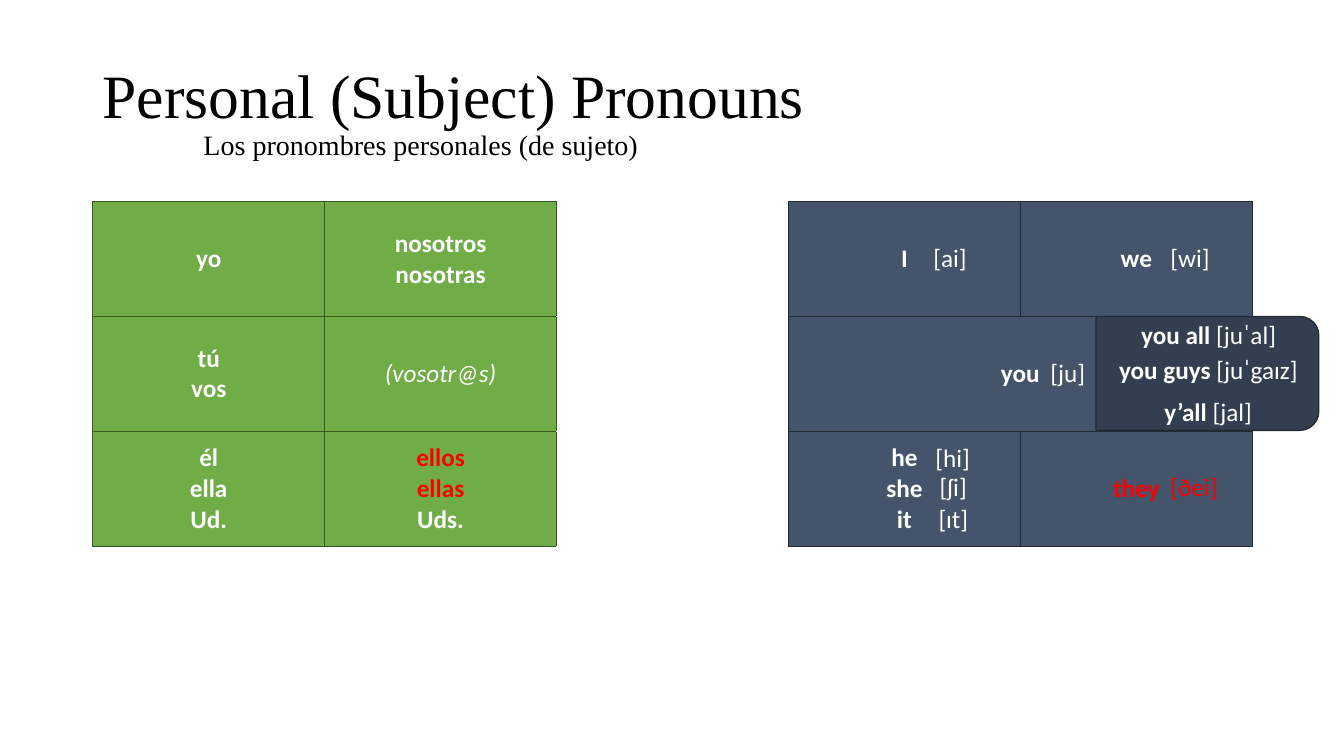
import lxml.etree
import pptx
import pptx.dml.color
import pptx.enum.shapes
import pptx.enum.text
import pptx.oxml.ns
import pptx.util

Inches = pptx.util.Inches
Pt = pptx.util.Pt
RGBColor = pptx.dml.color.RGBColor
qn = pptx.oxml.ns.qn
ALIGN = pptx.enum.text.PP_ALIGN
ANCHOR = pptx.enum.text.MSO_ANCHOR

WHITE = RGBColor(0xFF, 0xFF, 0xFF)
BLACK = RGBColor(0, 0, 0)
RED = RGBColor(0xFF, 0, 0)
GREEN = RGBColor(0x70, 0xAD, 0x47)
DARK_GREEN = RGBColor(0x38, 0x57, 0x23)
SLATE = RGBColor(0x44, 0x54, 0x6A)
DARK_SLATE = RGBColor(0x22, 0x2A, 0x35)
NAVY = RGBColor(0x33, 0x3F, 0x50)

THIRD_PLURAL = {"ellos", "ellas", "they"}
PRONOUNS = [
    ["yo", "nosotros\nnosotras", "", "I", "we"],
    ["tú\nvos", "(vosotr@s)", "", "you", ""],
    ["él\nella\nUd.", "ellos\nellas\nUds.", "", "he\nshe\nit", "they"],
]
SOUNDS = [
    ("[ai]", 9.16, 2.35, 0.54), ("[wi]", 11.51, 2.35, 0.59),
    ("[ju]", 10.32, 3.5, 0.55), ("[hi]", 9.18, 4.34, 0.55),
    ("[ʃi]", 9.22, 4.63, 0.47), ("[ɪt]", 9.21, 4.94, 0.52),
]
PLURAL_YOU = [
    ("you all ", "[juˈal]", 11.22, 3.12, 1.55),
    ("you guys ", "[juˈgaɪz]", 11, 3.47, 1.99),
    ("y’all ", "[jal]", 11.45, 3.88, 1.08),
]


class PronounSlide:
    """Draws the elements of the pronoun slide in one shared style."""

    def __init__(self, page):
        self.page = page
        self.body_font = "Calibri"
        self.title_font = "Times New Roman"
        self.body_size = 18

    def style(self, font, name, size, color, bold=False, italic=False):
        font.name = name
        font.size = Pt(size)
        font.color.rgb = color
        font.bold = bold
        font.italic = italic

    def title(self, heading, subtitle):
        box = self.page.shapes.add_textbox(Inches(0.92), Inches(0.4), Inches(11.5), Inches(1.45))
        frame = box.text_frame
        frame.word_wrap = True
        frame.vertical_anchor = ANCHOR.MIDDLE
        frame.text = f"{heading}\n{subtitle}"
        for para, size in zip(frame.paragraphs, (44, 20)):
            para.line_spacing = 0.9
            self.style(para.runs[0].font, self.title_font, size, BLACK)
        frame.paragraphs[1]._p.get_or_add_pPr().set("marL", str(Inches(1)))

    def borders(self, cell, colors):
        properties = cell._tc.get_or_add_tcPr()
        for side, color in colors.items():
            line = lxml.etree.SubElement(properties, qn(f"a:ln{side}"), w=str(Pt(1)))
            fill = lxml.etree.SubElement(line, qn("a:solidFill"))
            lxml.etree.SubElement(fill, qn("a:srgbClr"), val=str(color))

    def cell(self, cell, text, column):
        if column == 2:
            self.borders(cell, {"L": DARK_GREEN, "R": DARK_SLATE})
            cell.fill.background()
            return
        fill, edge = (GREEN, DARK_GREEN) if column < 2 else (SLATE, DARK_SLATE)
        self.borders(cell, dict.fromkeys("LRTB", edge))
        cell.fill.solid()
        cell.fill.fore_color.rgb = fill
        cell.vertical_anchor = ANCHOR.MIDDLE
        cell.text_frame.text = text
        for para in cell.text_frame.paragraphs:
            para.alignment = ALIGN.CENTER
            color = RED if para.text in THIRD_PLURAL else WHITE
            rare = para.text.startswith("(")
            for span in para.runs:
                self.style(span.font, self.body_font, self.body_size, color, not rare, rare)

    def table(self, rows):
        frame = self.page.shapes.add_table(
            len(rows), len(rows[0]), Inches(0.92), Inches(2), Inches(11.5), Inches(3.42))
        table = frame.table
        table.first_row = False
        table.horz_banding = False
        for row in table.rows:
            row.height = Inches(1.14)
        for column in table.columns:
            column.width = Inches(2.3)
        for r, texts in enumerate(rows):
            for c, text in enumerate(texts):
                self.cell(table.cell(r, c), text, c)
        table.cell(1, 3).merge(table.cell(1, 4))

    def panel(self):
        shape = self.page.shapes.add_shape(
            pptx.enum.shapes.MSO_SHAPE.ROUND_2_SAME_RECTANGLE,
            Inches(11.41), Inches(2.6), Inches(1.13), Inches(2.21))
        shape.rotation = 90
        shape.shadow.inherit = False
        shape.fill.solid()
        shape.fill.fore_color.rgb = NAVY
        shape.line.color.rgb = DARK_SLATE
        shape.line.width = Pt(1)

    def label(self, sound, left, top, width, word="", color=WHITE):
        box = self.page.shapes.add_textbox(Inches(left), Inches(top), Inches(width), Inches(0.4))
        frame = box.text_frame
        frame.word_wrap = False
        frame.auto_size = pptx.enum.text.MSO_AUTO_SIZE.SHAPE_TO_FIT_TEXT
        for text, bold in ((word, True), (sound, False)):
            if text:
                span = frame.paragraphs[0].add_run()
                span.text = text
                self.style(span.font, self.body_font, self.body_size, color, bold)


def main():
    deck = pptx.Presentation()
    deck.slide_width = Inches(13.33)
    deck.slide_height = Inches(7.5)
    slide = PronounSlide(deck.slides.add_slide(deck.slide_layouts[6]))
    slide.title("Personal (Subject) Pronouns", "Los pronombres personales (de sujeto)")
    slide.table(PRONOUNS)
    slide.panel()
    for sound, left, top, width in SOUNDS:
        slide.label(sound, left, top, width)
    for word, sound, left, top, width in PLURAL_YOU:
        slide.label(sound, left, top, width, word)
    slide.label("[ðei]", 11.51, 4.63, 0.67, color=RED)
    deck.save("out.pptx")


if __name__ == "__main__":
    main()
